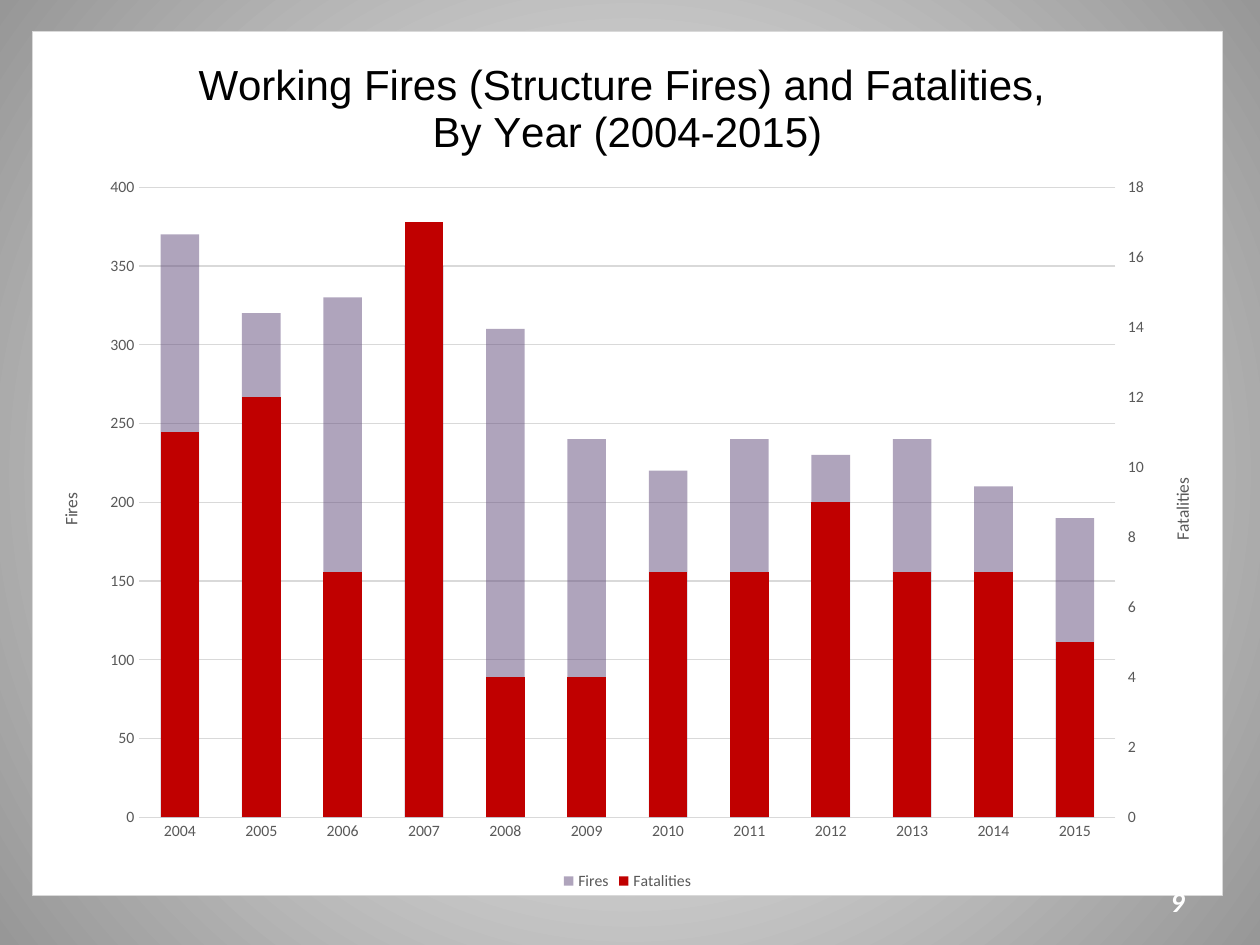
import copy
from dataclasses import dataclass

import pptx
import pptx.chart.axis
import pptx.chart.data
import pptx.dml.color
import pptx.enum.chart
import pptx.enum.text
import pptx.oxml
import pptx.oxml.ns
import pptx.util
from lxml import etree

qn = pptx.oxml.ns.qn
Pt = pptx.util.Pt


@dataclass(frozen=True)
class Theme:
    white: str = "FFFFFF"
    edge: str = "979797"
    black: str = "000000"
    text: str = "595959"
    grid: str = "D9D9D9"
    fires: str = "604A7B"
    deaths: str = "C00000"
    head_font: str = "Arial"
    body_font: str = "Calibri"
    head: int = 24
    axis_title: int = 10
    label: int = 9
    number: int = 16
    hairline: float = 0.75


T = Theme()
YEARS = [str(year) for year in range(2004, 2016)]
FIRES = (370, 320, 330, 350, 310, 240, 220, 240, 230, 240, 210, 190)
DEATHS = (11, 12, 7, 17, 4, 4, 7, 7, 9, 7, 7, 5)
TITLE = "Working Fires (Structure Fires) and Fatalities, \nBy Year (2004-2015)"


def rgb(code):
    return pptx.dml.color.RGBColor.from_string(code)


def style(font, size, color, name=T.body_font, bold=False, italic=False):
    font.size, font.name, font.bold, font.italic = Pt(size), name, bold, italic
    font.color.rgb = rgb(color)


def hairline(line):
    line.color.rgb = rgb(T.grid)
    line.width = Pt(T.hairline)


def paint_background(s):
    fill = s.background.fill
    fill.gradient()
    for stop, color in zip(fill.gradient_stops, (T.white, T.edge)):
        stop.color.rgb = rgb(color)
    grad = s.element.find(".//" + qn("a:gradFill"))
    grad.remove(grad.find(qn("a:lin")))
    circle = etree.SubElement(grad, qn("a:path"), path="circle")
    etree.SubElement(circle, qn("a:fillToRect"), l="50000", t="50000", r="50000", b="50000")


def title_axis(axis, text):
    tf = axis.axis_title.text_frame
    tf.text = text
    style(tf.paragraphs[0].font, T.axis_title, T.text)
    body = axis.axis_title.element.find(".//" + qn("a:bodyPr"))
    body.set("rot", "-5400000")
    body.set("vert", "horz")


def style_axes(chart):
    marks = pptx.enum.chart.XL_TICK_MARK
    for axis in (chart.category_axis, chart.value_axis):
        axis.major_tick_mark = axis.minor_tick_mark = marks.NONE
        style(axis.tick_labels.font, T.label, T.text)
    hairline(chart.category_axis.format.line)
    value = chart.value_axis
    value.format.line.fill.background()
    value.minimum_scale, value.maximum_scale, value.major_unit = 0, 400, 50
    hairline(value.major_gridlines.format.line)
    title_axis(value, "Fires")


def add_right_axis(chart):
    area = chart.element.find(".//" + qn("c:plotArea"))
    bars, cat, val = (area.find(qn(tag)) for tag in ("c:barChart", "c:catAx", "c:valAx"))
    bars2, cat2, val2 = (copy.deepcopy(e) for e in (bars, cat, val))
    bars.remove(bars.findall(qn("c:ser"))[1])
    bars2.remove(bars2.find(qn("c:ser")))
    ids = {cat.find(qn("c:axId")).get("val"): "5001", val.find(qn("c:axId")).get("val"): "5002"}
    for part in (bars2, cat2, val2):
        for tag in ("c:axId", "c:crossAx"):
            for ref in part.findall(qn(tag)):
                ref.set("val", ids[ref.get("val")])
    bars.addnext(bars2)
    val.addnext(val2)
    val2.addnext(cat2)
    val2.find(qn("c:axPos")).set("val", "r")
    val2.find(qn("c:crosses")).set("val", "max")
    pptx.chart.axis.CategoryAxis(cat2).visible = False
    right = pptx.chart.axis.ValueAxis(val2)
    right.has_major_gridlines = False
    right.major_tick_mark = pptx.enum.chart.XL_TICK_MARK.OUTSIDE
    right.maximum_scale, right.major_unit = 18, 2
    title_axis(right, "Fatalities")


def color_series(chart):
    for plot, color in zip(chart.plots, (T.fires, T.deaths)):
        fill = plot.series[0].format.fill
        fill.solid()
        fill.fore_color.rgb = rgb(color)
    bar = chart.plots[0].series[0]._element
    etree.SubElement(bar.find(".//" + qn("a:srgbClr")), qn("a:alpha"), val="50000")


def place_plot(chart, x, y, w, h):
    area = chart.element.find(".//" + qn("c:plotArea"))
    layout = area.find(qn("c:layout"))
    if layout is None:
        layout = etree.Element(qn("c:layout"))
        area.insert(0, layout)
    manual = etree.SubElement(layout, qn("c:manualLayout"))
    rules = dict(layoutTarget="inner", xMode="edge", yMode="edge", x=x, y=y, w=w, h=h)
    for tag, value in rules.items():
        etree.SubElement(manual, qn("c:" + tag), val=str(value))


def frame_chart(chart):
    chart.element.find(qn("c:txPr")).addprevious(pptx.oxml.parse_xml(
        f'<c:spPr {pptx.oxml.ns.nsdecls("c", "a")}>'
        f'<a:solidFill><a:srgbClr val="{T.white}"/></a:solidFill>'
        f'<a:ln w="{Pt(T.hairline)}"><a:solidFill><a:srgbClr val="{T.grid}"/></a:solidFill></a:ln>'
        '</c:spPr>'))


def add_fire_chart(s, x, y, w, h):
    data = pptx.chart.data.CategoryChartData()
    data.categories = YEARS
    data.add_series("Fires", FIRES)
    data.add_series("Fatalities", DEATHS)
    kind = pptx.enum.chart.XL_CHART_TYPE.COLUMN_CLUSTERED
    chart = s.shapes.add_chart(kind, x, y, w, h, data).chart
    style(chart.font, T.axis_title, T.black)
    tf = chart.chart_title.text_frame
    tf.text = TITLE
    for p in tf.paragraphs:
        style(p.font, T.head, T.black, T.head_font)
    chart.has_legend = True
    chart.legend.position = pptx.enum.chart.XL_LEGEND_POSITION.BOTTOM
    chart.legend.include_in_layout = False
    style(chart.legend.font, T.label, T.text)
    plot = chart.plots[0]
    plot.gap_width, plot.overlap, plot.vary_by_categories = 111, -100, False
    style_axes(chart)
    add_right_axis(chart)
    color_series(chart)
    place_plot(chart, 0.09, 0.18, 0.82, 0.73)
    frame_chart(chart)


def add_page_number(s, x, y, w, h):
    tf = s.shapes.add_textbox(x, y, w, h).text_frame
    tf.word_wrap = True
    tf.vertical_anchor = pptx.enum.text.MSO_ANCHOR.MIDDLE
    p = tf.paragraphs[0]
    p.text = "9"
    p.alignment = pptx.enum.text.PP_ALIGN.RIGHT
    style(p.font, T.number, T.white, bold=True, italic=True)


def main():
    prs = pptx.Presentation()
    prs.slide_width, prs.slide_height = pptx.util.Inches(10), pptx.util.Inches(7.5)
    s = prs.slides.add_slide(prs.slide_layouts[6])

    def box(x, y, w, h):
        return (int(x * prs.slide_width), int(y * prs.slide_height),
                int(w * prs.slide_width), int(h * prs.slide_height))

    paint_background(s)
    add_fire_chart(s, *box(0.025, 0.033, 0.946, 0.915))
    add_page_number(s, *box(0.717, 0.927, 0.233, 0.053))
    prs.save("out.pptx")


if __name__ == "__main__":
    main()
